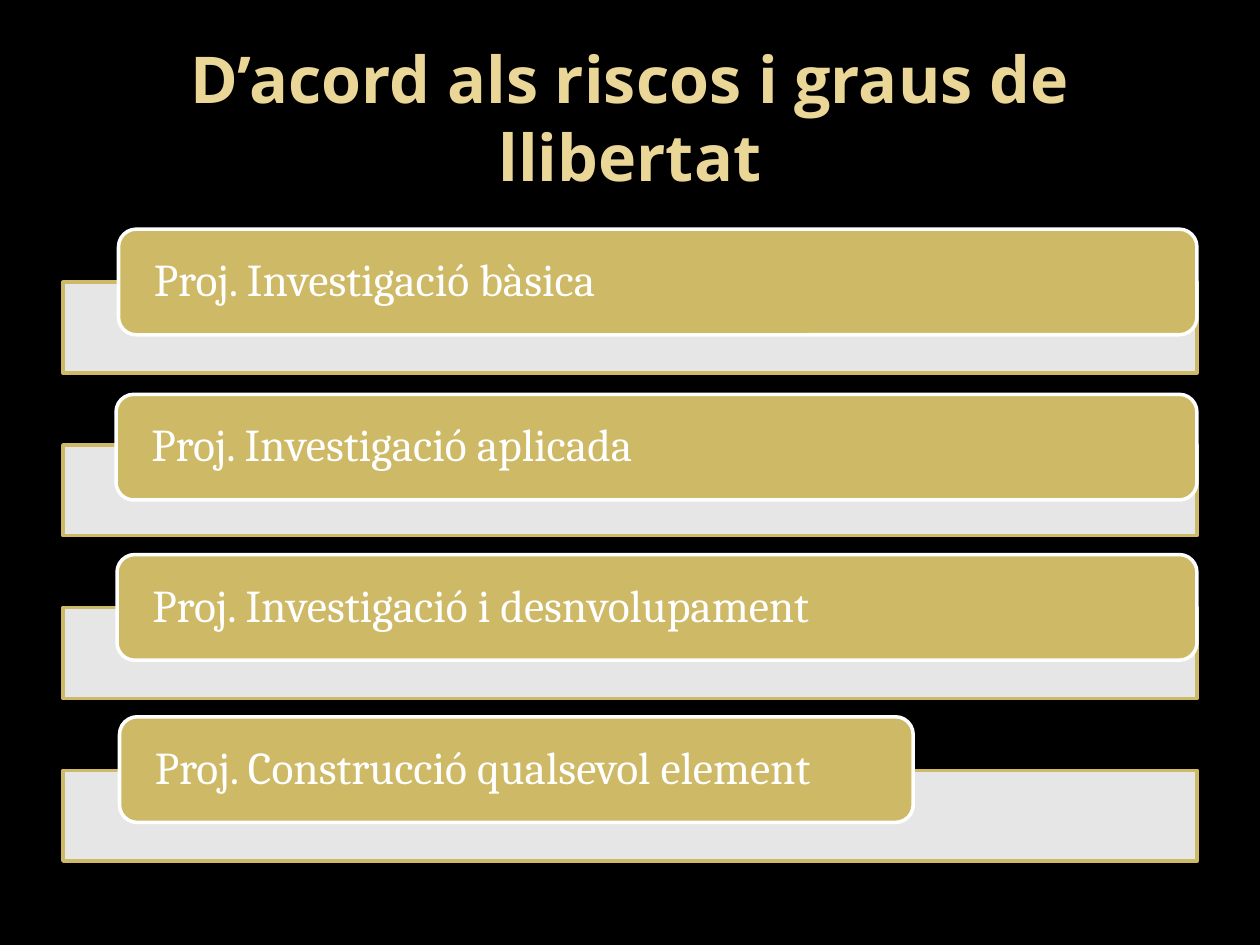
import pptx
import pptx.dml.color
import pptx.enum.shapes
import pptx.enum.text
import pptx.oxml
import pptx.oxml.ns
import pptx.util
from pptx.util import Cm

GOLD = "CEB966"
WHITE = "FFFFFF"
SHAPES = pptx.enum.shapes.MSO_SHAPE
ALIGN = pptx.enum.text.PP_ALIGN

BAR_LEFT, BAR_TOP, BAR_WIDTH, BAR_HEIGHT = 1.27, 5.69, 22.86, 1.83
BAR_PITCH = 3.28
CARD_HEIGHT = 2.13

# Text, left, top and width of each card, in centimetres
CARDS = [
    ("Proj. Investigació bàsica", 2.39, 4.62, 21.74),
    ("Proj. Investigació aplicada", 2.34, 7.95, 21.79),
    ("Proj. Investigació i desnvolupament", 2.36, 11.18, 21.77),
    ("Proj. Construcció qualsevol element", 2.41, 14.45, 16),
]


def color(value):
    return pptx.dml.color.RGBColor.from_string(value)


def set_opacity(shape, percent):
    solid = shape.fill._xPr.find(pptx.oxml.ns.qn("a:solidFill"))
    alpha = pptx.oxml.parse_xml(
        f'<a:alpha {pptx.oxml.ns.nsdecls("a")} val="{percent * 1000}"/>')
    solid[0].append(alpha)


def write_text(shape, text, font, size, text_color, align, bold=False):
    frame = shape.text_frame
    frame.word_wrap = True
    frame.vertical_anchor = pptx.enum.text.MSO_ANCHOR.MIDDLE
    paragraph = frame.paragraphs[0]
    paragraph.alignment = align
    run = paragraph.add_run()
    run.text = text
    run.font.name = font
    run.font.size = pptx.util.Pt(size)
    run.font.bold = bold
    run.font.color.rgb = color(text_color)
    return paragraph


def add_box(slide, kind, left, top, width, height, fill, line):
    shape = slide.shapes.add_shape(kind, Cm(left), Cm(top), Cm(width), Cm(height))
    shape.shadow.inherit = False
    shape.fill.solid()
    shape.fill.fore_color.rgb = color(fill)
    shape.line.color.rgb = color(line)
    shape.line.width = pptx.util.Pt(2)
    return shape


def add_title(slide, text):
    box = slide.shapes.add_textbox(Cm(1.27), Cm(0.76), Cm(22.86), Cm(3.18))
    write_text(box, text, "Open Sans", 36.9, "EAD696", ALIGN.CENTER, bold=True)


def add_bar(slide, top):
    bar = add_box(slide, SHAPES.RECTANGLE, BAR_LEFT, top, BAR_WIDTH, BAR_HEIGHT,
                  WHITE, GOLD)
    set_opacity(bar, 90)


def add_card(slide, text, left, top, width):
    card = add_box(slide, SHAPES.ROUNDED_RECTANGLE, left, top, width, CARD_HEIGHT,
                   GOLD, WHITE)
    frame = card.text_frame
    frame.margin_left = frame.margin_right = Cm(0.61)
    frame.margin_top = frame.margin_bottom = 0
    paragraph = write_text(card, text, "Cambria", 26, WHITE, ALIGN.LEFT)
    paragraph.line_spacing = 0.9


def main():
    presentation = pptx.Presentation()
    presentation.slide_width = Cm(25.4)
    presentation.slide_height = Cm(19.05)
    slide = presentation.slides.add_slide(presentation.slide_layouts[6])
    slide.background.fill.solid()
    slide.background.fill.fore_color.rgb = color("000000")

    add_title(slide, "D’acord als riscos i graus de llibertat")
    for index, (text, left, top, width) in enumerate(CARDS):
        add_bar(slide, BAR_TOP + index * BAR_PITCH)
        add_card(slide, text, left, top, width)
    presentation.save("out.pptx")


if __name__ == "__main__":
    main()
